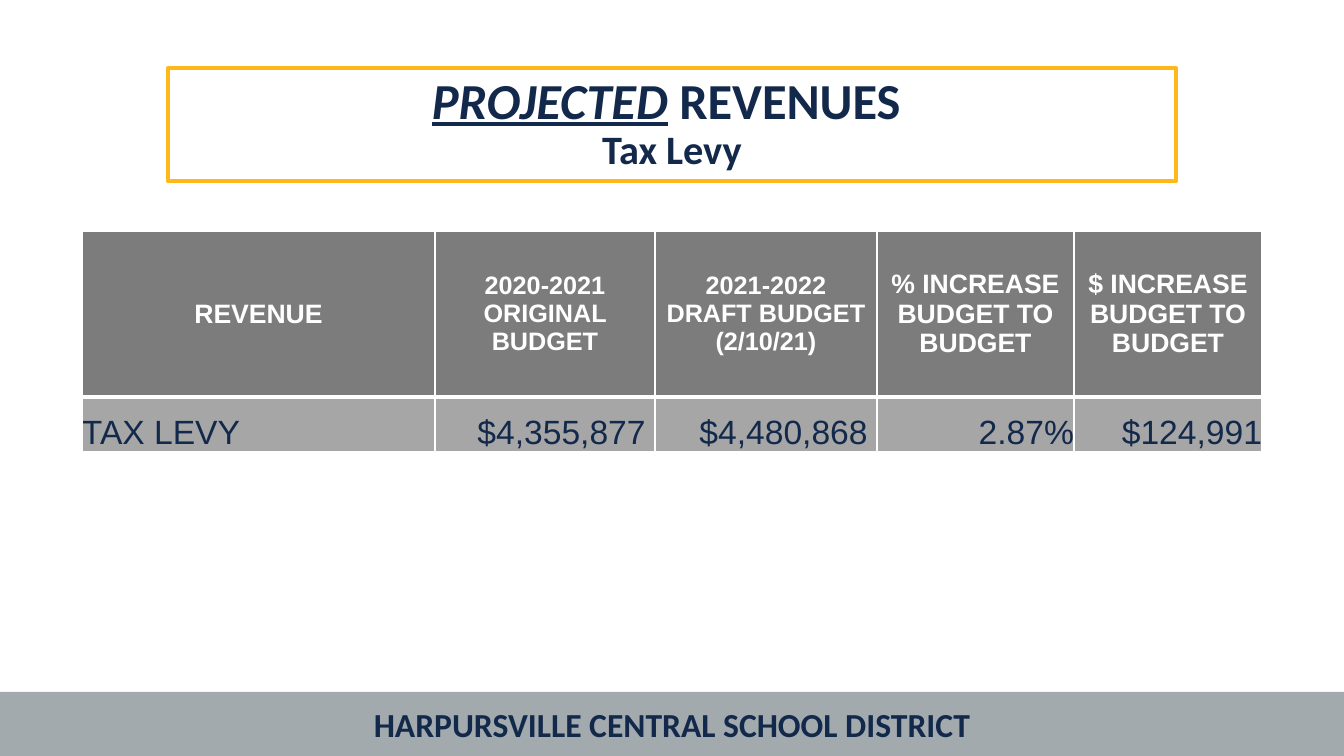
from lxml.etree import SubElement
from pptx import Presentation
from pptx.dml.color import RGBColor
from pptx.enum.shapes import MSO_SHAPE
from pptx.enum.text import MSO_ANCHOR, MSO_AUTO_SIZE, PP_ALIGN
from pptx.oxml.ns import qn
from pptx.util import Emu, Pt

NAVY, GOLD, SILVER, WHITE = "13294B", "FFB81C", "A2AAAD", "FFFFFF"
HEADER_GRAY, BODY_GRAY = "7C7C7C", "A6A6A6"
COLUMNS = [353, 220, 222, 197, 188]
ROWS = [166, 55]
HEADERS = [
    (["REVENUE"], 19),
    (["2020-2021", "ORIGINAL BUDGET"], 18),
    (["2021-2022", "DRAFT BUDGET (2/10/21)"], 18),
    (["% INCREASE BUDGET TO BUDGET"], 19),
    (["$ INCREASE BUDGET TO BUDGET"], 19),
]
LEVY = ["TAX LEVY", "$4,355,877 ", "$4,480,868 ", "2.87%", "$124,991"]


def px(n):
    return Emu(round(n * 914400 / 100.8))


def color(value):
    return RGBColor.from_string(value)


class SlideBuilder:
    heading_font = "Calibri"
    table_font = "Arial"

    def __init__(self, prs):
        self.slide = prs.slides.add_slide(prs.slide_layouts[5])

    def run(self, p, text, size, font, fill, bold=True, emphasis=False):
        r = p.add_run()
        r.text = text
        r.font.size = Pt(size)
        r.font.name = font
        r.font.bold = bold
        r.font.italic = r.font.underline = emphasis
        r.font.color.rgb = color(fill)

    def title(self, lines, x, y, w, h):
        sp = self.slide.shapes.title
        sp.left, sp.top, sp.width, sp.height = map(px, (x, y, w, h))
        sp.line.color.rgb = color(GOLD)
        sp.line.width = Pt(3)
        tf = sp.text_frame
        tf.word_wrap = True
        tf.auto_size = MSO_AUTO_SIZE.NONE
        tf.vertical_anchor = MSO_ANCHOR.MIDDLE
        for i, runs in enumerate(lines):
            p = tf.add_paragraph() if i else tf.paragraphs[0]
            p.alignment = PP_ALIGN.CENTER
            p.line_spacing = 0.9
            for text, size, emphasis in runs:
                self.run(p, text, size, self.heading_font, NAVY, emphasis=emphasis)

    def band(self, text, x, y, w, h):
        sp = self.slide.shapes.add_shape(MSO_SHAPE.RECTANGLE, *map(px, (x, y, w, h)))
        sp.shadow.inherit = False
        sp.fill.solid()
        sp.fill.fore_color.rgb = color(SILVER)
        sp.line.fill.background()
        tf = sp.text_frame
        tf.vertical_anchor = MSO_ANCHOR.MIDDLE
        p = tf.paragraphs[0]
        p.alignment = PP_ALIGN.CENTER
        self.run(p, text, 24, self.heading_font, NAVY)

    def table(self, x, y, columns, rows):
        frame = self.slide.shapes.add_table(
            len(rows), len(columns), *map(px, (x, y, sum(columns), sum(rows))))
        table = frame.table
        for column, width in zip(table.columns, columns):
            column.width = px(width)
        for row, height in zip(table.rows, rows):
            row.height = px(height)
        return table

    def borders(self, cell, top, bottom):
        tcPr = cell._tc.get_or_add_tcPr()
        for side, width in (("L", 1), ("R", 1), ("T", top), ("B", bottom)):
            ln = SubElement(tcPr, qn(f"a:ln{side}"), w=str(Pt(width)))
            fill = SubElement(ln, qn("a:solidFill"))
            SubElement(fill, qn("a:srgbClr"), val=WHITE)

    def cell(self, cell, lines, size, align, header, inset):
        self.borders(cell, 1 if header else 3, 3 if header else 1)
        cell.fill.solid()
        cell.fill.fore_color.rgb = color(HEADER_GRAY if header else BODY_GRAY)
        cell.vertical_anchor = MSO_ANCHOR.MIDDLE if header else MSO_ANCHOR.BOTTOM
        if not inset:
            cell.margin_left = cell.margin_right = 0
            cell.margin_top = cell.margin_bottom = 0
        tf = cell.text_frame
        for i, line in enumerate(lines):
            p = tf.add_paragraph() if i else tf.paragraphs[0]
            p.alignment = align
            self.run(p, line, size, self.table_font, WHITE if header else NAVY, header)


def main():
    prs = Presentation()
    prs.slide_width, prs.slide_height = px(1344), px(756)
    s = SlideBuilder(prs)
    s.band("HARPURSVILLE CENTRAL SCHOOL DISTRICT", 0, 692, 1344, 64)
    s.title([
        [("PROJECTED", 36, True), (" REVENUES ", 36, False)],
        [("Tax Levy", 28.8, False)],
    ], 168, 68, 1008, 113)
    table = s.table(82, 231, COLUMNS, ROWS)
    for i, (lines, size) in enumerate(HEADERS):
        s.cell(table.cell(0, i), lines, size, PP_ALIGN.CENTER, True, len(lines) > 1)
    for i, text in enumerate(LEVY):
        align = PP_ALIGN.RIGHT if i else PP_ALIGN.LEFT
        s.cell(table.cell(1, i), [text], 24, align, False, False)
    prs.save("out.pptx")


if __name__ == "__main__":
    main()
